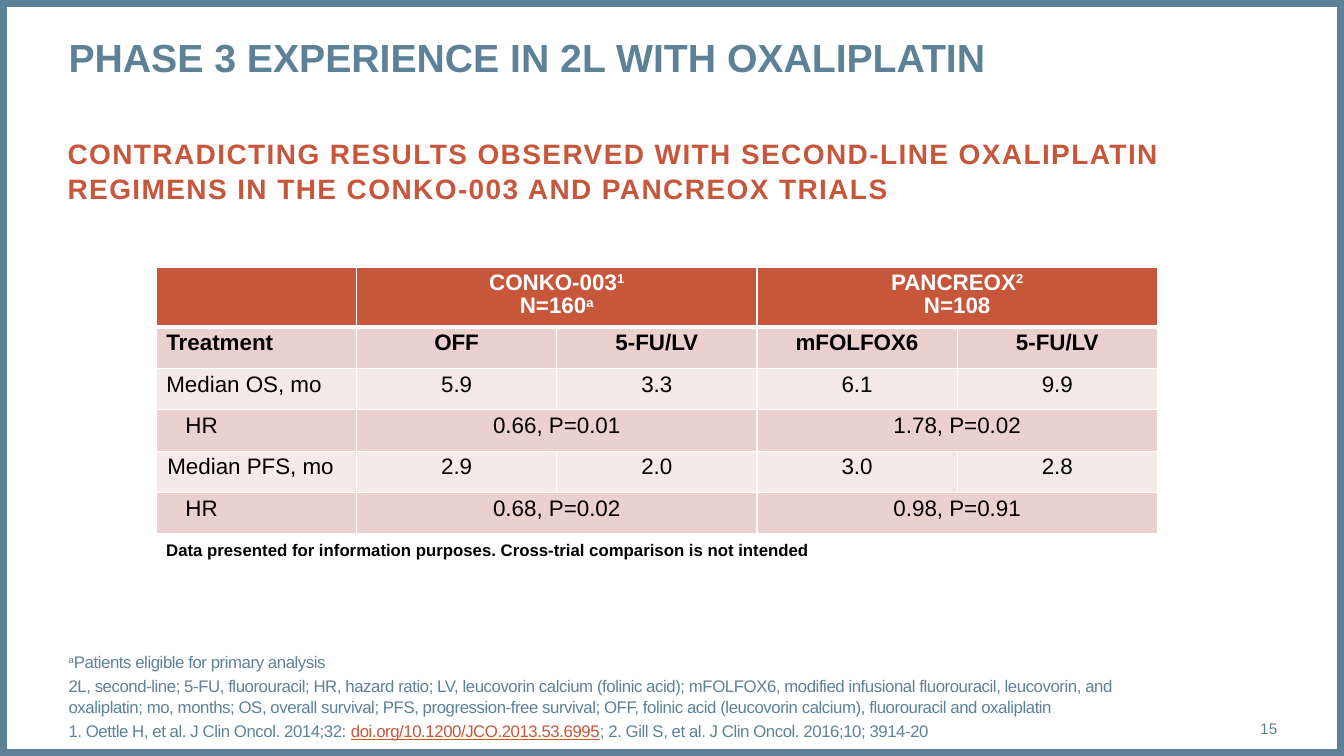
from lxml import etree
from pptx import Presentation
from pptx import util as u
from pptx.dml.color import RGBColor
from pptx.enum import shapes, text
from pptx.oxml.ns import qn

BLUE, RUST, LINK, WHITE, BLACK = "5D8298", "C7573C", "C6573B", "FFFFFF", "000000"
BANDS = ["EAD1CE", "F5EAE8"]
SUP = {"base": 30}
LEFT, CENTER, RIGHT = text.PP_ALIGN.LEFT, text.PP_ALIGN.CENTER, text.PP_ALIGN.RIGHT
TOP, MIDDLE, BOTTOM = text.MSO_ANCHOR.TOP, text.MSO_ANCHOR.MIDDLE, text.MSO_ANCHOR.BOTTOM

TITLE = [["PHASE 3 EXPERIENCE IN 2L WITH OXALIPLATIN"]]
SUBTITLE = [["CONTRADICTING RESULTS OBSERVED WITH SECOND-LINE OXALIPLATIN REGIMENS "
             "IN THE CONKO-003 AND PANCREOX TRIALS"]]
FOOTNOTES = [
    [("a", SUP), "Patients eligible for primary analysis"],
    ["2L, second-line; 5-FU, fluorouracil; HR, hazard ratio; LV, leucovorin calcium "
     "(folinic acid); mFOLFOX6, modified infusional fluorouracil, leucovorin, and "
     "oxaliplatin; mo, months; OS, overall survival; PFS, progression-free survival; "
     "OFF, folinic acid (leucovorin calcium), fluorouracil and oxaliplatin"],
    ["1. Oettle H, et al. J Clin Oncol. 2014;32: ",
     ("doi.org/10.1200/JCO.2013.53.6995", {"color": LINK, "underline": True}),
     "; 2. Gill S, et al. J Clin Oncol. 2016;10; 3914-20"],
]
PAGE = [["15"]]
NOTE = [["Data presented for information purposes. Cross-trial comparison is not intended"]]

TRIALS = [
    ["CONKO-003", ("1", SUP), "\n", "N=160", ("a", SUP)],
    ["PANCREOX", ("2", SUP), "\n", "N=108"],
]
ROWS = [
    ["Treatment", "OFF", "5-FU/LV", "mFOLFOX6", "5-FU/LV"],
    ["Median OS, mo", "5.9", "3.3", "6.1", "9.9"],
    ["HR", "0.66, P=0.01", None, "1.78, P=0.02", None],
    ["Median PFS, mo", "2.9", "2.0", "3.0", "2.8"],
    ["HR", "0.68, P=0.02", None, "0.98, P=0.91", None],
]
INDENTS = {"HR": 0.19, "Median PFS, mo": 0.01}
TABLE_AT = (1.55, 2.65, 9.93)
HEAD_H, ROW_H = 0.59, 0.41

BOXES = [
    (SUBTITLE, (0.67, 1.33, 12, 0.77),
     {"size": 20, "color": RUST, "bold": True, "spc": 100}, {"line_spacing": 1.06}, {}),
    (TITLE, (0.68, 0.28, 11.99, 0.94),
     {"size": 28, "color": BLUE, "bold": True}, {"line_spacing": 1.1}, {}),
    (FOOTNOTES, (0.68, 6.95, 11.13, 0.4),
     {"size": 12, "color": BLUE, "spc": -30}, {}, {"vertical_anchor": BOTTOM}),
    (PAGE, (11.81, 7.03, 0.86, 0.4),
     {"size": 11, "color": BLUE}, {"alignment": RIGHT}, {"vertical_anchor": MIDDLE}),
    (NOTE, (1.55, 5.31, 6.74, 0.3),
     {"size": 12, "color": BLACK, "bold": True}, {},
     {"word_wrap": False, "margin_left": u.Inches(0.1), "margin_top": u.Inches(0.05)}),
]


def rgb(value):
    return RGBColor.from_string(value)


def put(obj, values):
    for name, value in values.items():
        setattr(obj, name, value)


def add_run(p, content, fmt):
    if content == "\n":
        p.add_line_break()
        etree.SubElement(p._p[-1], qn("a:rPr"), sz=str(fmt["size"] * 100))
        return
    words, extra = content if isinstance(content, tuple) else (content, {})
    f = {**fmt, **extra}
    r = p.add_run()
    r.text = words
    put(r.font, {"name": "Arial", "size": u.Pt(f["size"]), "bold": f.get("bold", False),
                 "underline": f.get("underline", False)})
    r.font.color.rgb = rgb(f["color"])
    rPr = r._r.get_or_add_rPr()
    if "spc" in f:
        rPr.set("spc", str(f["spc"]))
    if "base" in f:
        rPr.set("baseline", str(f["base"] * 1000))


def write(tf, paragraphs, fmt, layout):
    for i, runs in enumerate(paragraphs):
        p = tf.add_paragraph() if i else tf.paragraphs[0]
        put(p, layout)
        if i:
            p.space_before = u.Pt(3)
        for content in runs:
            add_run(p, content, fmt)


def add_border(cell, side, width):
    ln = etree.SubElement(cell._tc.get_or_add_tcPr(), qn("a:ln" + side), w=str(u.Pt(width)))
    fill = etree.SubElement(ln, qn("a:solidFill"))
    etree.SubElement(fill, qn("a:srgbClr"), val=WHITE)


def add_results(s):
    grid = [[None, TRIALS[0], None, TRIALS[1], None]]
    grid += [[v and [v] for v in row] for row in ROWS]
    x, y, w = TABLE_AT
    heights = [HEAD_H] + [ROW_H] * len(ROWS)
    table = s.shapes.add_table(len(grid), 5, u.Inches(x), u.Inches(y),
                               u.Inches(w), u.Inches(sum(heights))).table
    for col in table.columns:
        col.width = u.Inches(w / 5)
    for i, row in enumerate(grid):
        table.rows[i].height = u.Inches(heights[i])
        for j, runs in enumerate(row):
            cell = table.cell(i, j)
            for side in "LRTB":
                heavy = (i, side) in [(0, "B"), (1, "T")]
                add_border(cell, side, 3 if heavy else 1)
            cell.fill.solid()
            cell.fill.fore_color.rgb = rgb(BANDS[(i - 1) % 2] if i else LINK)
            if runs:
                if j == 0:
                    cell.margin_left = u.Inches(0.1 + INDENTS.get(runs[0], 0))
                fmt = {"size": 16, "color": BLACK if i else WHITE, "bold": i < 2}
                write(cell.text_frame, [runs], fmt,
                      {"alignment": CENTER if j else LEFT, "line_spacing": 0.93})
        for j in (1, 3):
            if row[j + 1] is None:
                table.cell(i, j).merge(table.cell(i, j + 1))


def main():
    prs = Presentation()
    put(prs, {"slide_width": u.Inches(13.33), "slide_height": u.Inches(7.5)})
    s = prs.slides.add_slide(prs.slide_layouts[6])
    frame = s.shapes.add_shape(shapes.MSO_SHAPE.RECTANGLE, 0, 0,
                               prs.slide_width, prs.slide_height)
    frame.shadow.inherit = False
    frame.fill.background()
    frame.line.color.rgb = rgb(BLUE)
    frame.line.width = u.Pt(10)
    for paragraphs, at, fmt, layout, options in BOXES:
        tf = s.shapes.add_textbox(*map(u.Inches, at)).text_frame
        put(tf, {"word_wrap": True, "margin_left": 0, "margin_top": 0, "margin_right": 0,
                 "margin_bottom": 0, "vertical_anchor": TOP, **options})
        write(tf, paragraphs, fmt, layout)
    add_results(s)
    prs.save("out.pptx")


if __name__ == "__main__":
    main()
